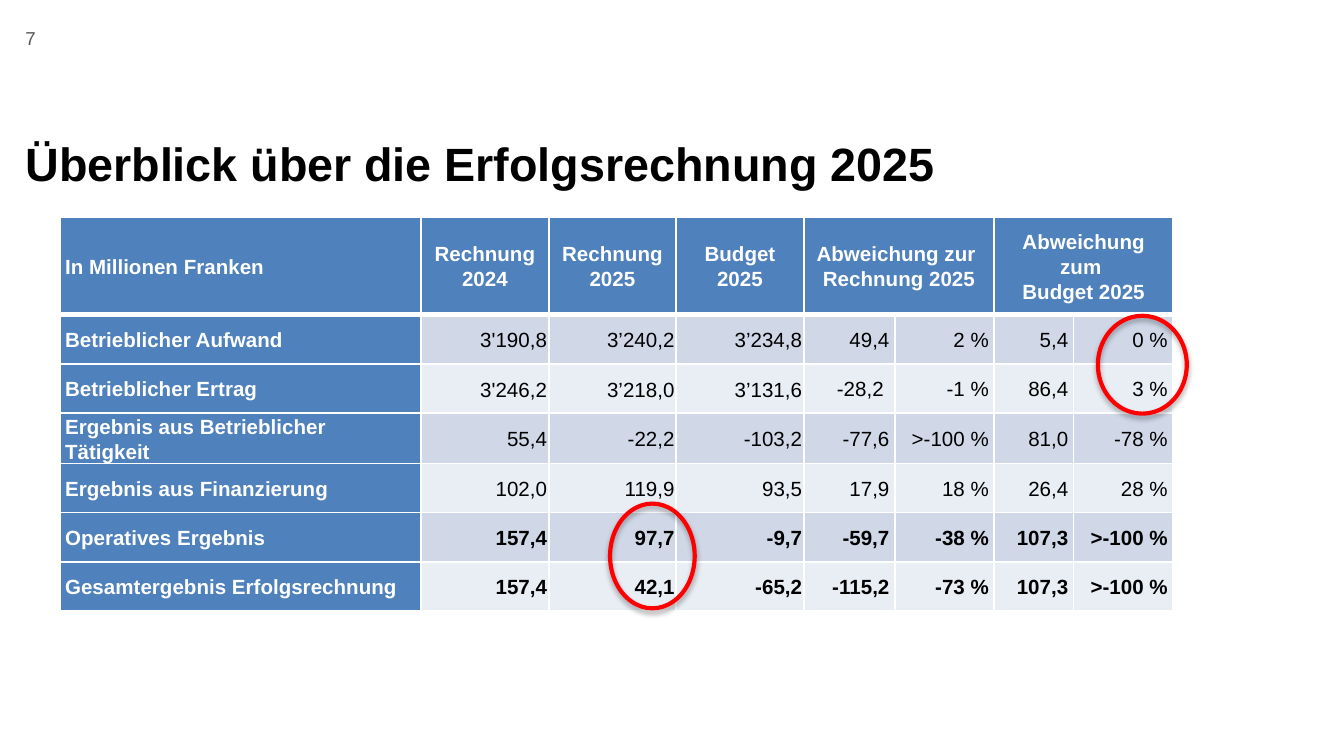
"""Build the slide with the 2025 income statement overview table."""
from lxml import etree
from pptx import Presentation
from pptx.dml.color import RGBColor
from pptx.enum import shapes, text
from pptx.oxml import parse_xml
from pptx.oxml.ns import nsdecls
from pptx.util import Cm, Pt

BLACK = RGBColor(0x00, 0x00, 0x00)
WHITE = RGBColor(0xFF, 0xFF, 0xFF)
GREY = RGBColor(0x55, 0x59, 0x59)
BLUE = RGBColor(0x4F, 0x81, 0xBD)
RED = RGBColor(0xFF, 0x00, 0x00)
BANDS = [RGBColor(0xD0, 0xD8, 0xE8), RGBColor(0xE9, 0xED, 0xF4)]

COL_WIDTHS = [6.83, 2.41, 2.41, 2.41, 1.72, 1.88, 1.5, 1.88]
HEADER_HEIGHT, ROW_HEIGHT = 1.85, 0.93
ROWS = [
    ["In Millionen Franken", "Rechnung\n2024", "Rechnung\n2025", "Budget\n2025",
     "Abweichung zur \nRechnung 2025", "", "Abweichung zum \nBudget 2025", ""],
    ["Betrieblicher Aufwand", "3'190,8", "3’240,2", "3’234,8", "49,4", "2 %", "5,4", "0 %"],
    ["Betrieblicher Ertrag", "3'246,2", "3’218,0", "3’131,6", "-28,2 ", "-1 %", "86,4", "3 %"],
    ["Ergebnis aus Betrieblicher Tätigkeit", "55,4", "-22,2", "-103,2", "-77,6", ">-100 %",
     "81,0", "-78 %"],
    ["Ergebnis aus Finanzierung", "102,0", "119,9", "93,5", "17,9", "18 %", "26,4", "28 %"],
    ["Operatives Ergebnis", "157,4", "97,7", "-9,7", "-59,7", "-38 %", "107,3", ">-100 %"],
    ["Gesamtergebnis Erfolgsrechnung", "157,4", "42,1", "-65,2", "-115,2", "-73 %", "107,3",
     ">-100 %"],
]
RESULT_ROW = 5
ELLIPSES = [(11.53, 9.52, 1.6, 1.98), (20.75, 5.97, 1.68, 1.85)]


def add_text(p, content, size, color, bold=False):
    for i, line in enumerate(content.split("\n")):
        if i:
            p.add_line_break()
        r = p.add_run()
        r.text = line
        r.font.name = "Arial"
        r.font.size = Pt(size)
        r.font.bold = bold
        r.font.color.rgb = color


def add_borders(cell, bottom_width):
    for side in "LRTB":
        width = Pt(bottom_width if side == "B" else 1)
        cell._tc.get_or_add_tcPr().append(parse_xml(
            f'<a:ln{side} {nsdecls("a")} w="{width}"><a:solidFill>'
            f'<a:srgbClr val="{WHITE}"/></a:solidFill></a:ln{side}>'))


prs = Presentation()
prs.slide_width, prs.slide_height = Cm(25.4), Cm(14.29)
s = prs.slides.add_slide(prs.slide_layouts[5])

title = s.shapes.title
number = s.shapes.add_textbox(Cm(0.48), Cm(0.51), Cm(1.12), Cm(0.76))
title.left, title.top, title.width, title.height = Cm(0.48), Cm(2.03), Cm(24.41), Cm(1.55)
for sp in (number, title):
    tf = sp.text_frame
    tf.word_wrap = True
    tf.auto_size = text.MSO_AUTO_SIZE.NONE
    tf.margin_left = tf.margin_top = tf.margin_right = tf.margin_bottom = 0
    tf.paragraphs[0].alignment = text.PP_ALIGN.LEFT
add_text(number.text_frame.paragraphs[0], "7", 10, GREY)
title.text_frame.vertical_anchor = text.MSO_ANCHOR.BOTTOM
title.text_frame.paragraphs[0].line_spacing = 0.7
add_text(title.text_frame.paragraphs[0], "Überblick über die Erfolgsrechnung 2025", 25, BLACK, True)

table = s.shapes.add_table(
    len(ROWS), len(COL_WIDTHS), Cm(1.13), Cm(4.1), Cm(sum(COL_WIDTHS)),
    Cm(HEADER_HEIGHT + ROW_HEIGHT * (len(ROWS) - 1))).table
for col, width in zip(table.columns, COL_WIDTHS):
    col.width = Cm(width)
for i, row in enumerate(table.rows):
    row.height = Cm(ROW_HEIGHT if i else HEADER_HEIGHT)
for j in (4, 6):
    table.cell(0, j).merge(table.cell(0, j + 1))

for i, values in enumerate(ROWS):
    for j, value in enumerate(values):
        cell = table.cell(i, j)
        heading = i == 0 or j == 0
        amount = i > 0 and 1 <= j <= 3
        add_borders(cell, 1 if i else 3)
        cell.fill.solid()
        cell.fill.fore_color.rgb = BLUE if heading else BANDS[(i - 1) % 2]
        cell.vertical_anchor = text.MSO_ANCHOR.MIDDLE
        cell.margin_left = cell.margin_right = Cm(0.03 if amount else 0.1)
        cell.margin_top = Cm(0.03 if amount else 0)
        cell.margin_bottom = 0
        if cell.is_spanned:
            continue
        p = cell.text_frame.paragraphs[0]
        if j == 0:
            p.alignment = text.PP_ALIGN.LEFT
        else:
            p.alignment = text.PP_ALIGN.RIGHT if i else text.PP_ALIGN.CENTER
        p.line_spacing = 1.0 if amount and i != 2 else 1.1
        add_text(p, value, 11, WHITE if heading else BLACK, heading or i >= RESULT_ROW)

for box in ELLIPSES:
    sp = s.shapes.add_shape(shapes.MSO_SHAPE.OVAL, *[Cm(v) for v in box])
    sp.fill.background()
    sp.line.color.rgb = RED
    sp.line.width = Pt(2.25)
    sp.shadow.inherit = False
    effects = sp._element.spPr.find("{*}effectLst")
    effects.append(etree.fromstring(
        f'<a:outerShdw {nsdecls("a")} blurRad="{Pt(3.1)}" dist="{Pt(1.8)}" dir="5400000" '
        f'rotWithShape="0"><a:srgbClr val="{BLACK}"><a:alpha val="35000"/></a:srgbClr>'
        '</a:outerShdw>'))

prs.save("out.pptx")
